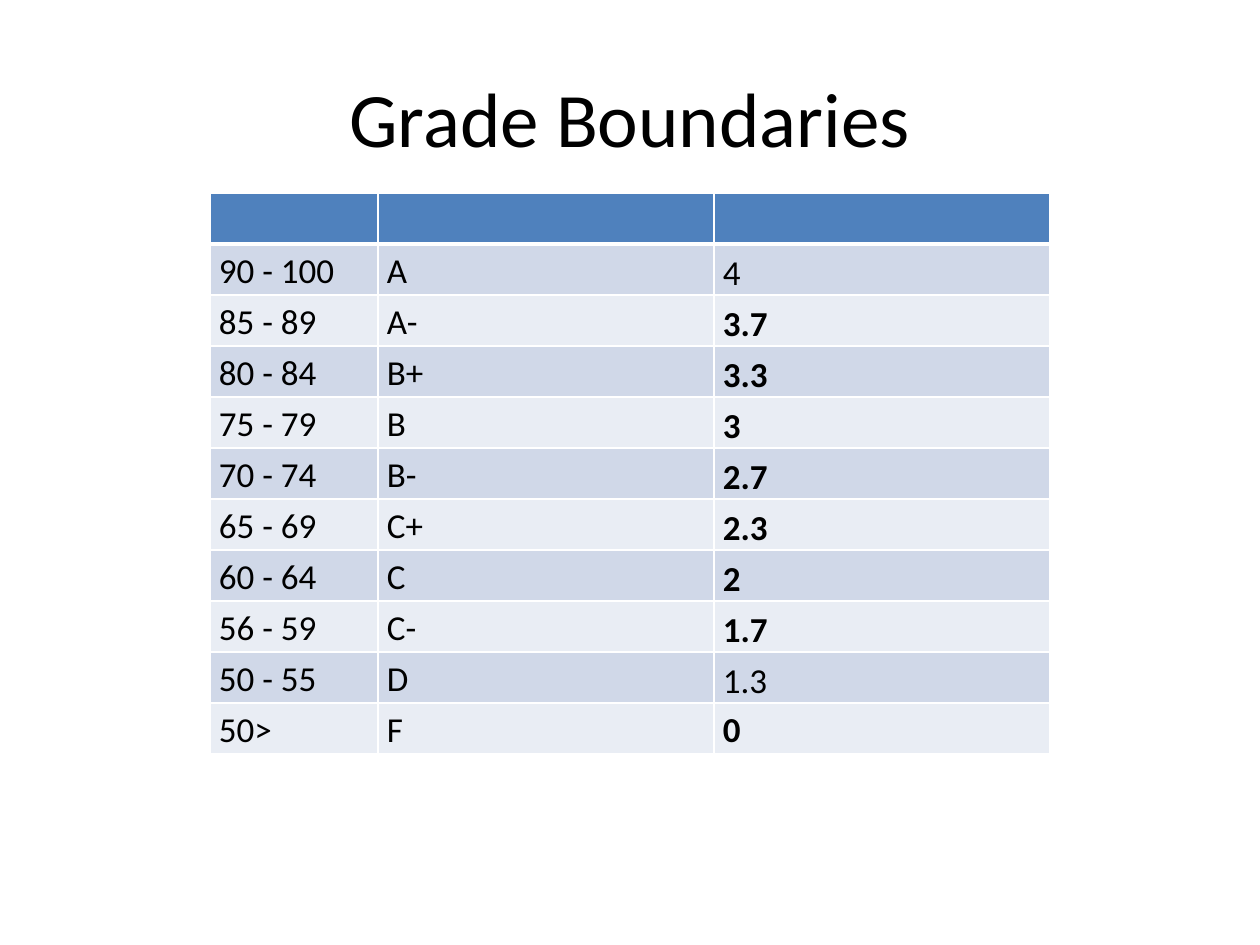
from pptx import Presentation as Deck
from pptx.dml.color import RGBColor as Color
from pptx.enum.text import MSO_ANCHOR as Anchor, PP_ALIGN as Align
from pptx.oxml import parse_xml as to_xml
from pptx.oxml.ns import nsdecls
from pptx.util import Emu, Pt

BLACK = Color(0x00, 0x00, 0x00)
WHITE = Color(0xFF, 0xFF, 0xFF)
BLUE = Color(0x4F, 0x81, 0xBD)
DARK = Color(0xD0, 0xD8, 0xE8)
LIGHT = Color(0xE9, 0xED, 0xF4)

GRADES = [
    ("90 - 100", "A", "4"),
    ("85 - 89", "A-", "3.7"),
    ("80 - 84", "B+", "3.3"),
    ("75 - 79", "B", "3"),
    ("70 - 74", "B-", "2.7"),
    ("65 - 69", "C+", "2.3"),
    ("60 - 64", "C", "2"),
    ("56 - 59", "C-", "1.7"),
    ("50 - 55", "D", "1.3"),
    ("50>", "F", "0"),
]
PLAIN = {"4", "1.3"}


def px(n):
    return Emu(round(n * 914400 / 126))


class Page:
    """Holds the text style and the current slide."""

    def __init__(self, deck, font="Calibri"):
        self.font = font
        self.slide = deck.slides.add_slide(deck.slide_layouts[6])

    def style(self, para, size, bold=False):
        for run in para.runs:
            font = run.font
            font.name, font.size, font.bold = self.font, Pt(size), bold
            font.color.rgb = BLACK

    def title(self, text, x, y, w, h):
        frame = self.slide.shapes.add_textbox(px(x), px(y), px(w), px(h)).text_frame
        frame.word_wrap = True
        frame.vertical_anchor = Anchor.MIDDLE
        frame.text = text
        para = frame.paragraphs[0]
        para.alignment = Align.CENTER
        self.style(para, 44)

    def paint(self, cell, fill, base=1):
        cell.fill.solid()
        cell.fill.fore_color.rgb = fill
        props = cell._tc.get_or_add_tcPr()
        for i, (side, width) in enumerate(zip("LRTB", (1, 1, 1, base))):
            props.insert(i, to_xml(
                f'<a:ln{side} {nsdecls("a")} w="{Pt(width)}"><a:solidFill>'
                f'<a:srgbClr val="{WHITE}"/></a:solidFill></a:ln{side}>'))

    def label(self, cell, text, bold=False, low=False):
        cell.margin_left = cell.margin_right = px(9)
        cell.margin_top = cell.margin_bottom = 0
        cell.text_frame.text = text
        para = cell.text_frame.paragraphs[0]
        para.line_spacing = 1.15
        if low:
            cell.vertical_anchor = Anchor.BOTTOM
            para.space_after = Pt(10)
        self.style(para, 20, bold)

    def table(self, rows, x, y, cols, high):
        count = len(rows) + 1
        grid = self.slide.shapes.add_table(
            count, len(cols), px(x), px(y), px(sum(cols)), px(high * count)).table
        for col, wide in zip(grid.columns, cols):
            col.width = px(wide)
        for row in grid.rows:
            row.height = px(high)
        for cell in grid.rows[0].cells:
            self.paint(cell, BLUE, 3)
        for r, row in enumerate(rows, 1):
            for c, text in enumerate(row):
                cell = grid.cell(r, c)
                point = c == len(cols) - 1
                self.label(cell, text, point and text not in PLAIN,
                           point and r < len(rows))
                self.paint(cell, DARK if r % 2 else LIGHT)


def main():
    deck = Deck()
    deck.slide_width, deck.slide_height = px(1260), px(945)
    page = Page(deck)
    page.title("Grade Boundaries", 63, 38, 1134, 157)
    page.table(GRADES, 210, 193, (168, 336, 336), 51)
    deck.save("out.pptx")


if __name__ == "__main__":
    main()
